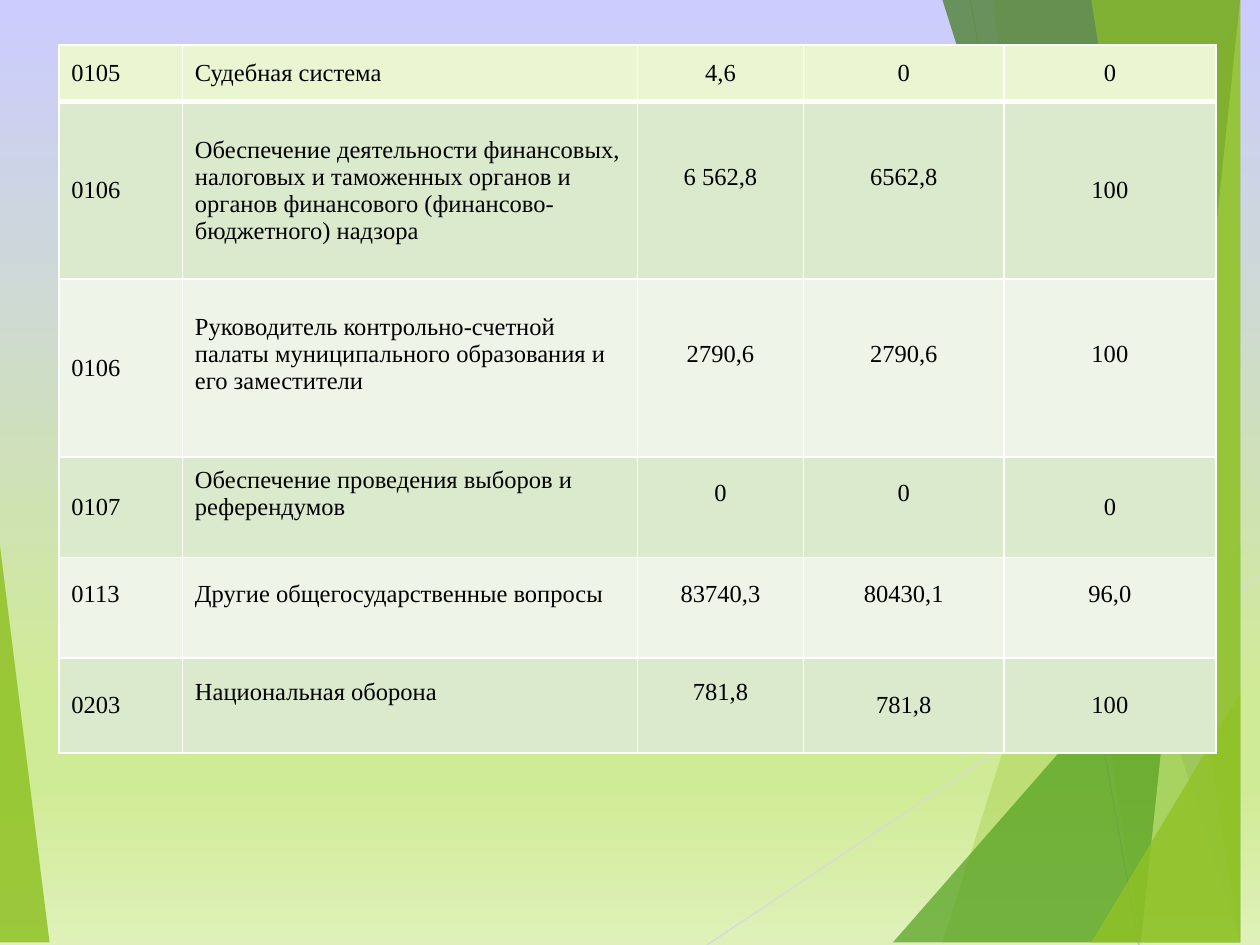
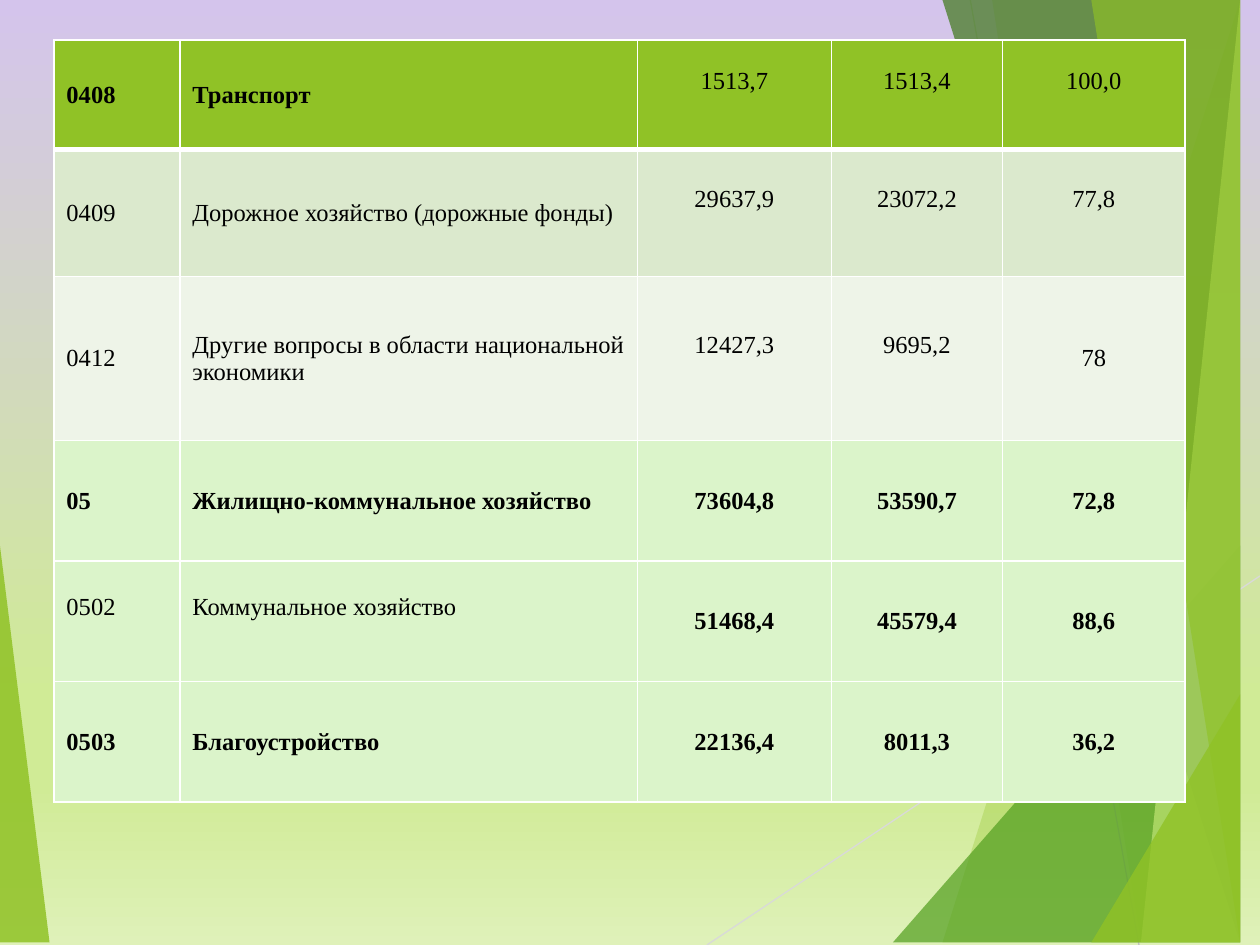
from lxml import etree
from pptx import Presentation
from pptx import util as u
from pptx.dml.color import RGBColor
from pptx.enum import shapes, text
from pptx.oxml import ns

# Shared look
FONT = "Times New Roman"
BLACK = RGBColor(0x00, 0x00, 0x00)
WHITE = RGBColor(0xFF, 0xFF, 0xFF)
LIME = RGBColor(0x90, 0xC2, 0x26)
GREEN = RGBColor(0x54, 0xA0, 0x21)
DARK_GREEN = RGBColor(0x3F, 0x78, 0x19)
PALE_LIME = RGBColor(0xC0, 0xE4, 0x74)
LIGHT_GREY = RGBColor(0xD9, 0xD9, 0xD9)
GREY = RGBColor(0xBF, 0xBF, 0xBF)
LAVENDER = RGBColor(0xCC, 0xCC, 0xFF)
LILAC = RGBColor(0xD4, 0xC4, 0xEC)
MEADOW = RGBColor(0xD0, 0xEB, 0x96)
MEADOW_LIGHT = RGBColor(0xDF, 0xF1, 0xB9)
HEADER_PALE = RGBColor(0xEA, 0xF6, 0xD1)
BAND_DARK = RGBColor(0xDB, 0xE9, 0xCD)
BAND_LIGHT = RGBColor(0xEE, 0xF4, 0xE8)
BAND_MINT = RGBColor(0xDB, 0xF4, 0xCA)

WIDTH, HEIGHT = 25.4, 19.05
TEXT_LINE = 0.55  # height of one text line, cm

# Facets from back to front: colour, opacity in percent, corners in cm
LOWER_RIGHT, UPPER_RIGHT = (WIDTH, HEIGHT), (WIDTH, 0)
LEFT_FACET = (LIME, 85, [(0, 11.15), (1.24, HEIGHT), (0, HEIGHT)])
RIGHT_FACETS = [
    (LIME, 30, [(24.77, 0), (19.15, HEIGHT), LOWER_RIGHT, UPPER_RIGHT]),
    (LIME, 20, [(20.02, 0), (23.34, HEIGHT), LOWER_RIGHT, UPPER_RIGHT]),
    (GREEN, 72, [(18.44, HEIGHT), (WIDTH, 10.9), LOWER_RIGHT]),
    (DARK_GREEN, 70, [(19.48, 0), (24.64, HEIGHT), LOWER_RIGHT, UPPER_RIGHT]),
    (PALE_LIME, 70, [(24.92, 0), (23.04, HEIGHT), LOWER_RIGHT, UPPER_RIGHT]),
    (LIME, 65, [(22.43, 0), (25.04, HEIGHT), LOWER_RIGHT, (25.35, 0)]),
    (LIME, 80, [(22.38, HEIGHT), (WIDTH, 13.59), LOWER_RIGHT]),
]
RAYS = [
    (LIGHT_GREY, (14.25, HEIGHT), (WIDTH, 11.61)),
    (GREY, (19.56, 0), (22.96, HEIGHT)),
]

# Tables; in each row: height, fill, bold flags, flags for raised text, texts
TABLES = [
    {
        "sky": LAVENDER, "left": 1.19, "top": 0.91,
        "columns": [2.49, 9.17, 3.35, 4.04, 4.27],
        "rows": [
            (1.14, HEADER_PALE, "00000", "00000",
             ["0105", "Судебная система", "4,6", "0", "0"]),
            (3.58, BAND_DARK, "00000", "00110",
             ["0106", "Обеспечение деятельности финансовых, налоговых и "
              "таможенных органов и органов финансового "
              "(финансово-бюджетного) надзора", "6 562,8", "6562,8", "100"]),
            (3.58, BAND_LIGHT, "00000", "01111",
             ["0106", "Руководитель контрольно-счетной палаты муниципального "
              "образования и его заместители", "2790,6", "2790,6", "100"]),
            (2.03, BAND_DARK, "00000", "01110",
             ["0107", "Обеспечение проведения выборов и референдумов",
              "0", "0", "0"]),
            (2.03, BAND_LIGHT, "00000", "11111",
             ["0113", "Другие общегосударственные вопросы",
              "83740,3", "80430,1", "96,0"]),
            (1.91, BAND_DARK, "00000", "01100",
             ["0203", "Национальная оборона", "781,8", "781,8", "100"]),
        ],
    },
    {
        "sky": LILAC, "left": 1.09, "top": 0.81,
        "columns": [2.54, 9.22, 3.91, 3.45, 3.68],
        "rows": [
            (2.2, LIME, "11000", "00111",
             ["0408", "Транспорт", "1513,7", "1513,4", "100,0"]),
            (2.56, BAND_DARK, "00000", "00111",
             ["0409", "Дорожное хозяйство (дорожные фонды)",
              "29637,9", "23072,2", "77,8"]),
            (3.31, BAND_LIGHT, "00000", "00110",
             ["0412", "Другие вопросы в области национальной экономики",
              "12427,3", "9695,2", "78"]),
            (2.43, BAND_MINT, "11111", "00000",
             ["05", "Жилищно-коммунальное хозяйство",
              "73604,8", "53590,7", "72,8"]),
            (2.43, BAND_MINT, "00111", "11000",
             ["0502", "Коммунальное хозяйство", "51468,4", "45579,4", "88,6"]),
            (2.43, BAND_MINT, "11111", "00000",
             ["0503", "Благоустройство", "22136,4", "8011,3", "36,2"]),
        ],
    },
]


def add_solid(parent, colour):
    fill = etree.SubElement(parent, ns.qn("a:solidFill"))
    return etree.SubElement(fill, ns.qn("a:srgbClr"), val=str(colour))


def add_facet(slide, colour, opacity, corners):
    builder = slide.shapes.build_freeform(*corners[0], scale=float(u.Cm(1)))
    builder.add_line_segments(corners[1:], close=True)
    shape = builder.convert_to_shape()
    shape.shadow.inherit = False
    shape.fill.solid()
    shape.fill.fore_color.rgb = colour
    shape.line.fill.background()
    colour_element = shape.element.spPr.find(".//" + ns.qn("a:srgbClr"))
    etree.SubElement(colour_element, ns.qn("a:alpha"), val=str(opacity * 1000))


presentation = Presentation()
presentation.slide_width = u.Cm(WIDTH)
presentation.slide_height = u.Cm(HEIGHT)

for content in TABLES:
    slide = presentation.slides.add_slide(presentation.slide_layouts[6])

    # Background gradient, top to bottom
    background = slide.background.fill
    background.gradient()
    background.gradient_angle = 270
    stops = slide.element.find(".//" + ns.qn("a:gsLst"))
    for stop in list(stops):
        stops.remove(stop)
    for position, colour in [(0, content["sky"]), (74, MEADOW),
                             (83, MEADOW), (100, MEADOW_LIGHT)]:
        stop = etree.SubElement(stops, ns.qn("a:gs"), pos=str(position * 1000))
        etree.SubElement(stop, ns.qn("a:srgbClr"), val=str(colour))

    # Facets and thin rays
    add_facet(slide, *LEFT_FACET)
    for colour, start, end in RAYS:
        ray = slide.shapes.add_connector(
            shapes.MSO_CONNECTOR.STRAIGHT, *map(u.Cm, start + end))
        ray.line.color.rgb = colour
        ray.line.width = u.Pt(0.75)
        etree.SubElement(ray.element.spPr, ns.qn("a:effectLst"))
    for facet in RIGHT_FACETS:
        add_facet(slide, *facet)

    # Budget table
    columns, rows = content["columns"], content["rows"]
    table = slide.shapes.add_table(
        len(rows), len(columns), u.Cm(content["left"]), u.Cm(content["top"]),
        u.Cm(sum(columns)), u.Cm(sum(row[0] for row in rows))).table
    table.first_row = table.horz_banding = False
    for column, width in zip(table.columns, columns):
        column.width = u.Cm(width)

    for row_number, (height, fill, bold, raised, texts) in enumerate(rows):
        table.rows[row_number].height = u.Cm(height)
        for column_number, value in enumerate(texts):
            cell = table.cell(row_number, column_number)
            is_amount = column_number >= 2

            # Borders: a heavy rule under the first row
            properties = cell._tc.get_or_add_tcPr()
            for side in "LRTB":
                heavy = (side, row_number) in [("B", 0), ("T", 1)]
                border = etree.SubElement(properties, ns.qn("a:ln" + side),
                                          w=str(u.Pt(3 if heavy else 1)))
                add_solid(border, WHITE)
            cell.fill.solid()
            cell.fill.fore_color.rgb = fill

            # Text, raised by half a line where flagged
            cell.vertical_anchor = text.MSO_ANCHOR.MIDDLE
            margin = 0 if is_amount else 0.13
            cell.margin_left = cell.margin_right = u.Cm(0.02 if is_amount else 0.25)
            cell.margin_top = u.Cm(margin)
            cell.margin_bottom = u.Cm(margin + TEXT_LINE * int(raised[column_number]))
            paragraph = cell.text_frame.paragraphs[0]
            if is_amount:
                paragraph.alignment = text.PP_ALIGN.CENTER
            run = paragraph.add_run()
            run.text = value
            run.font.name = FONT
            run.font.size = u.Pt(14)
            run.font.bold = bold[column_number] == "1"
            run.font.color.rgb = BLACK

presentation.save("out.pptx")
